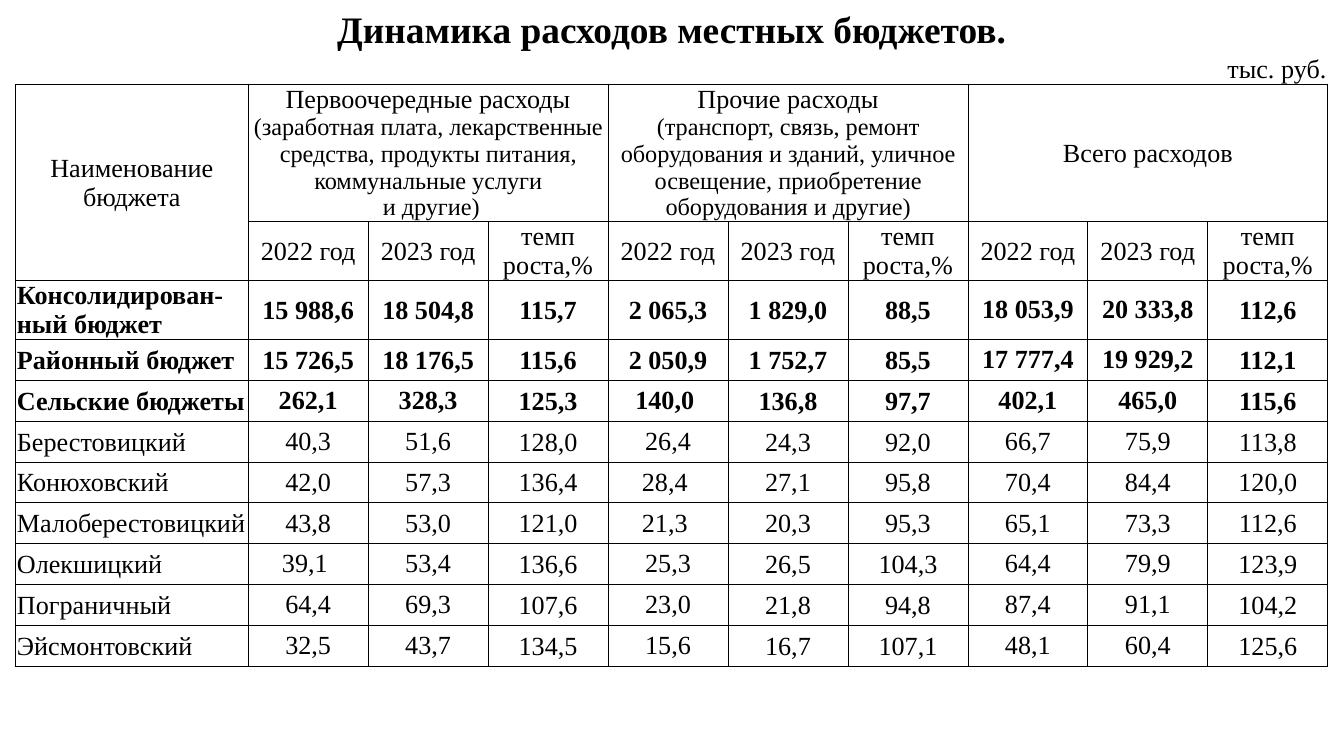
import pptx
import pptx.dml.color
import pptx.enum.text
import pptx.oxml
import pptx.oxml.ns
import pptx.util
from lxml import etree

Pt = pptx.util.Pt
ALIGN = pptx.enum.text.PP_ALIGN
ANCHOR = pptx.enum.text.MSO_ANCHOR
BLACK = pptx.dml.color.RGBColor(0, 0, 0)
FONT = "Times New Roman"
TITLE_SIZE, TEXT_SIZE, NOTE_SIZE = 20, 14, 13

TITLE = "Динамика расходов местных бюджетов."
UNIT = "тыс. руб."
NAME_HEADING = "Наименование бюджета"
# Each group is a list of paragraphs, each paragraph a list of (text, size).
GROUPS = [
    [[("Первоочередные расходы ", TEXT_SIZE),
      ("(заработная плата, лекарственные средства, продукты питания, "
       "коммунальные услуги", NOTE_SIZE)],
     [(" и другие)", NOTE_SIZE)]],
    [[("Прочие расходы", TEXT_SIZE)],
     [("(транспорт, связь, ремонт оборудования и зданий, уличное освещение, "
       "приобретение оборудования и другие)", NOTE_SIZE)]],
    [[("Всего расходов", TEXT_SIZE)]],
]
MEASURES = [["2022 год"], ["2023 год"], ["темп", "роста,%"]]
BUDGETS = [
    ("Консолидирован-ный бюджет", "15 988,6", "18 504,8", "115,7",
     "2 065,3", "1 829,0", "88,5", "18 053,9", "20 333,8", "112,6"),
    ("Районный бюджет", "15 726,5", "18 176,5", "115,6",
     "2 050,9", "1 752,7", "85,5", "17 777,4", "19 929,2", "112,1"),
    ("Сельские бюджеты", "262,1", "328,3", "125,3",
     "140,0 ", "136,8", "97,7", "402,1", "465,0", "115,6"),
    ("Берестовицкий", "40,3", "51,6", "128,0",
     "26,4", "24,3", "92,0", "66,7", "75,9", "113,8"),
    ("Конюховский", "42,0", "57,3", "136,4",
     "28,4 ", "27,1", "95,8", "70,4", "84,4", "120,0"),
    ("Малоберестовицкий", "43,8", "53,0", "121,0",
     "21,3 ", "20,3", "95,3", "65,1", "73,3", "112,6"),
    ("Олекшицкий", "39,1 ", "53,4", "136,6",
     "25,3", "26,5", "104,3", "64,4", "79,9", "123,9"),
    ("Пограничный", "64,4", "69,3", "107,6",
     "23,0", "21,8", "94,8", "87,4", "91,1", "104,2"),
    ("Эйсмонтовский", "32,5", "43,7", "134,5",
     "15,6", "16,7", "107,1", "48,1", "60,4", "125,6"),
]
BOLD_BUDGETS = 3

LEFT, TOP = 8.4, 4.3
COLUMN_WIDTHS = [124.6] + [64.28] * 9
ROW_HEIGHTS = [23.1, 16, 73.4, 31.6, 31.6] + [21.9] * 8
TITLE_ROW, UNIT_ROW, GROUP_ROW, MEASURE_ROW, FIRST_BUDGET_ROW = range(5)
LAST_COLUMN = len(COLUMN_WIDTHS) - 1
MARGIN, BORDER = 0.7, 0.5


def set_borders(cell, visible_sides):
    properties = cell._tc.get_or_add_tcPr()
    for index, side in enumerate("LRTB"):
        line = pptx.oxml.parse_xml(
            f'<a:ln{side} {pptx.oxml.ns.nsdecls("a")} w="{Pt(BORDER)}"/>')
        if side in visible_sides:
            fill = etree.SubElement(line, pptx.oxml.ns.qn("a:solidFill"))
            etree.SubElement(fill, pptx.oxml.ns.qn("a:srgbClr"), val=str(BLACK))
        else:
            etree.SubElement(line, pptx.oxml.ns.qn("a:noFill"))
        properties.insert(index, line)


def prepare_cell(cell, row):
    """Give the cell its margins, borders and a small empty line."""
    margins = {"margin_left": MARGIN, "margin_right": MARGIN,
               "margin_top": MARGIN, "margin_bottom": 0}
    for name, value in margins.items():
        setattr(cell, name, Pt(value))
    cell.vertical_anchor = ANCHOR.BOTTOM if row < GROUP_ROW else ANCHOR.MIDDLE
    cell.fill.background()
    set_borders(cell, {TITLE_ROW: "", UNIT_ROW: "B"}.get(row, "LRTB"))
    etree.SubElement(cell.text_frame.paragraphs[0]._p,
                     pptx.oxml.ns.qn("a:endParaRPr"), sz=str(TEXT_SIZE * 100))


def write_cell(cell, paragraphs, align=ALIGN.CENTER, bold=False):
    frame = cell.text_frame
    for index, spans in enumerate(paragraphs):
        para = frame.add_paragraph() if index else frame.paragraphs[0]
        para.alignment = align
        for text, size in spans:
            span = para.add_run()
            span.text = text
            span.font.color.rgb = BLACK
            formats = {"name": FONT, "size": Pt(size), "bold": bold}
            for name, value in formats.items():
                setattr(span.font, name, value)


def plain(*lines):
    return [[(line, TEXT_SIZE)] for line in lines]


def fill_headings(table):
    title = table.cell(TITLE_ROW, 0)
    title.merge(table.cell(TITLE_ROW, LAST_COLUMN))
    write_cell(title, [[(TITLE, TITLE_SIZE)]], bold=True)
    for column in (1, 3, 5):
        table.cell(UNIT_ROW, column).merge(table.cell(UNIT_ROW, column + 1))
    write_cell(table.cell(UNIT_ROW, LAST_COLUMN), plain(UNIT), ALIGN.RIGHT)
    heading = table.cell(GROUP_ROW, 0)
    heading.merge(table.cell(MEASURE_ROW, 0))
    write_cell(heading, plain(NAME_HEADING))
    for index, paragraphs in enumerate(GROUPS):
        first = 1 + index * len(MEASURES)
        group = table.cell(GROUP_ROW, first)
        group.merge(table.cell(GROUP_ROW, first + len(MEASURES) - 1))
        write_cell(group, paragraphs)
        for column, lines in enumerate(MEASURES, first):
            write_cell(table.cell(MEASURE_ROW, column), plain(*lines))


def fill_budgets(table):
    for index, budget in enumerate(BUDGETS):
        for column, text in enumerate(budget):
            cell = table.cell(FIRST_BUDGET_ROW + index, column)
            write_cell(cell, plain(text), ALIGN.CENTER if column else ALIGN.LEFT,
                       index < BOLD_BUDGETS)
            if column in (7, 8) or (index >= 2 and column in (1, 2, 4)):
                cell.margin_bottom = Pt(MARGIN)


def main():
    deck = pptx.Presentation()
    deck.slide_width, deck.slide_height = Pt(720), Pt(405)
    page = deck.slides.add_slide(deck.slide_layouts[6])
    table = page.shapes.add_table(
        len(ROW_HEIGHTS), len(COLUMN_WIDTHS), Pt(LEFT), Pt(TOP),
        Pt(sum(COLUMN_WIDTHS)), Pt(sum(ROW_HEIGHTS))).table
    table.first_row = table.horz_banding = False
    for column, width in zip(table.columns, COLUMN_WIDTHS):
        column.width = Pt(width)
    for index, height in enumerate(ROW_HEIGHTS):
        table.rows[index].height = Pt(height)
        for cell in table.rows[index].cells:
            prepare_cell(cell, index)
    fill_headings(table)
    fill_budgets(table)
    deck.save("out.pptx")


if __name__ == "__main__":
    main()
